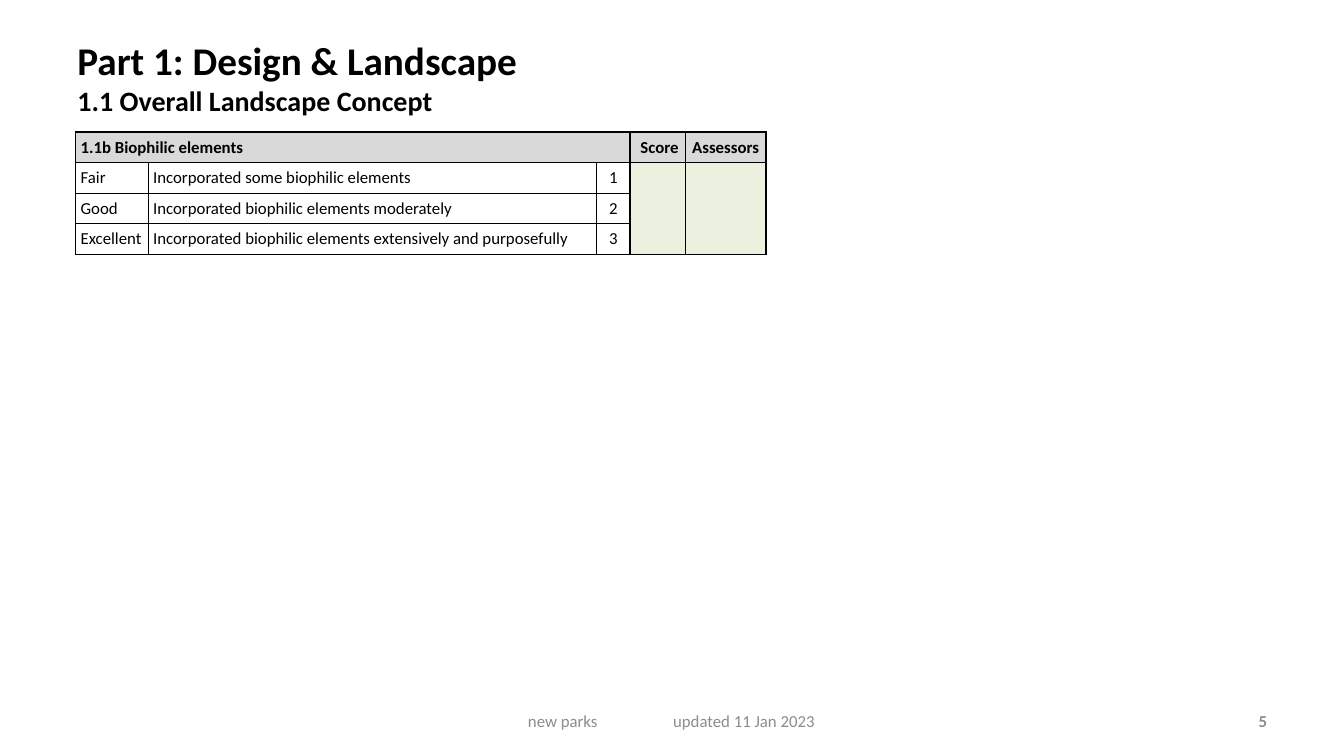
from dataclasses import dataclass

from lxml.etree import SubElement
from pptx import Presentation
from pptx.dml.color import RGBColor as RGB
from pptx.enum.text import MSO_ANCHOR as Anchor, PP_ALIGN as Align
from pptx.oxml import parse_xml
from pptx.oxml.ns import nsdecls, qn
from pptx.util import Pt

TITLE = "Part 1: Design & Landscape"
SUBTITLE = "1.1 Overall Landscape Concept"
HEADER = ["1.1b Biophilic elements", "", "", "Score", "Assessors"]
RATINGS = [
    ["Fair", "Incorporated some biophilic elements", "1", "", ""],
    ["Good", "Incorporated biophilic elements moderately", "2", "", ""],
    ["Excellent", "Incorporated biophilic elements extensively and purposefully", "3", "", ""],
]
FOOTER = ["new parks", "updated 11 Jan 2023"]
PAGE = "5"

COLS = [51.84, 320.4, 23.76, 39.6, 57.6]
ROW_H = 21.85
TABLE_AT = (54, 94.3)
MERGES = [((0, 0), (0, 2)), ((1, 3), (3, 3)), ((1, 4), (3, 4))]
SCORE_COL = 3


@dataclass(frozen=True)
class Theme:
    font: str = "Calibri"
    title: float = 28
    subtitle: float = 20
    body: float = 12
    ink: str = "000000"
    muted: str = "8C8C8C"
    header: str = "D9D9D9"
    paper: str = "FFFFFF"
    entry: str = "EBF1DE"
    border: float = 1
    pad: float = 3.6


T = Theme()


def style(font, size, color, bold=False):
    font.name, font.size, font.bold = T.font, Pt(size), bold
    font.color.rgb = RGB.from_string(color)


def text_box(s, box, anchor):
    tf = s.shapes.add_textbox(*map(Pt, box)).text_frame
    tf.word_wrap = True
    tf.vertical_anchor = anchor
    return tf


def add_title(s):
    tf = text_box(s, (48.24, 21.6, 745.9, 71.3), Anchor.TOP)
    tf.margin_top = Pt(4.5)
    p = tf.paragraphs[0]
    for text, size in ((TITLE, T.title), (SUBTITLE, T.subtitle)):
        if p.runs:
            p.add_line_break()
        r = p.add_run()
        r.text = text
        style(r.font, size, T.ink, True)


def set_borders(cell):
    tc_pr = cell._tc.get_or_add_tcPr()
    for i, side in enumerate(("lnL", "lnR", "lnT", "lnB")):
        tc_pr.insert(i, parse_xml(
            f'<a:{side} {nsdecls("a")} w="{Pt(T.border)}"><a:solidFill>'
            f'<a:srgbClr val="{T.ink}"/></a:solidFill></a:{side}>'))


def add_score_table(s):
    rows = [HEADER] + RATINGS
    table = s.shapes.add_table(len(rows), len(COLS), *map(Pt, TABLE_AT),
                               Pt(sum(COLS)), Pt(ROW_H * len(rows))).table
    table.first_row = table.horz_banding = False
    for col, width in zip(table.columns, COLS):
        col.width = Pt(width)
    for i, row in enumerate(rows):
        table.rows[i].height = Pt(ROW_H)
        for j, text in enumerate(row):
            cell = table.cell(i, j)
            cell.margin_left = cell.margin_right = Pt(T.pad)
            cell.margin_top = cell.margin_bottom = Pt(T.pad)
            cell.vertical_anchor = Anchor.MIDDLE
            cell.fill.solid()
            fill = T.header if i == 0 else T.entry if j >= SCORE_COL else T.paper
            cell.fill.fore_color.rgb = RGB.from_string(fill)
            set_borders(cell)
            cell.text = text
            p = cell.text_frame.paragraphs[0]
            p.alignment = Align.CENTER if j >= 2 else Align.LEFT
            style(p.font, T.body, T.ink, i == 0)
    table.cell(0, SCORE_COL).margin_left = Pt(T.pad + 2.7)
    for first, last in MERGES:
        table.cell(*first).merge(table.cell(*last))


def add_footer(s):
    tf = text_box(s, (328.3, 500.4, 303.8, 28.8), Anchor.MIDDLE)
    tf.margin_left = Pt(48.8)
    p = tf.paragraphs[0]
    p.text = "\t".join(FOOTER)
    tabs = SubElement(p._p.get_or_add_pPr(), qn("a:tabLst"))
    SubElement(tabs, qn("a:tab"), pos=str(Pt(103.7)), algn="l")
    style(p.font, T.body, T.muted)


def add_page_number(s):
    p = text_box(s, (688.3, 500.4, 223.9, 28.8), Anchor.MIDDLE).paragraphs[0]
    p.text = PAGE
    p.alignment = Align.RIGHT
    style(p.font, T.body, T.muted, True)


def main():
    prs = Presentation()
    prs.slide_width, prs.slide_height = Pt(960), Pt(540)
    s = prs.slides.add_slide(prs.slide_layouts[6])
    add_page_number(s)
    add_title(s)
    add_score_table(s)
    add_footer(s)
    prs.save("out.pptx")


if __name__ == "__main__":
    main()
